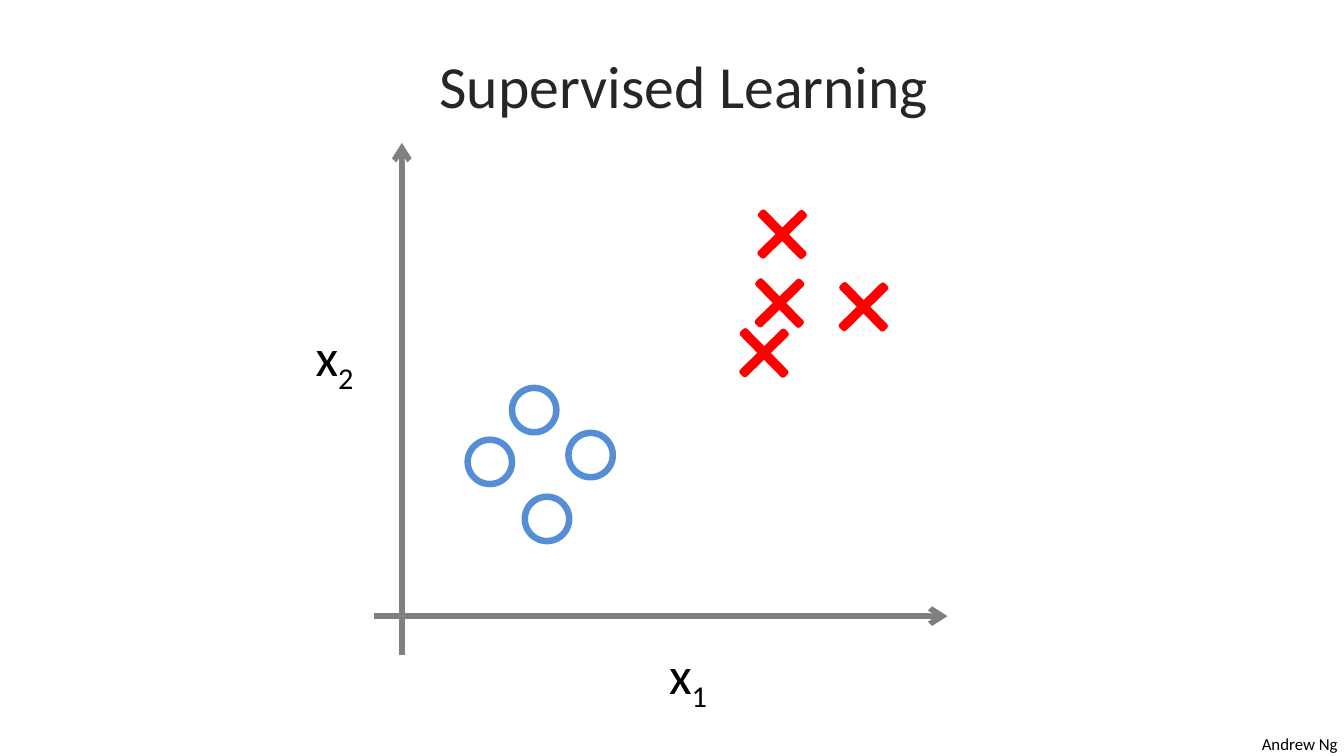
from dataclasses import dataclass

from lxml.etree import SubElement
from pptx import Presentation
from pptx.dml.color import RGBColor as Rgb
from pptx.enum.shapes import MSO_CONNECTOR as Connector, MSO_SHAPE as Preset
from pptx.enum.text import MSO_ANCHOR as Anchor, MSO_AUTO_SIZE as AutoSize, PP_ALIGN as Align
from pptx.oxml.ns import qn
from pptx.util import Inches, Pt

WIDTH = Inches(10)
HEIGHT = WIDTH * 9 // 16


@dataclass(frozen=True)
class Theme:
    font: str = "Calibri"
    title_size: float = 32
    label_size: float = 28
    credit_size: float = 9
    title: Rgb = Rgb(0x26, 0x26, 0x26)
    ink: Rgb = Rgb(0, 0, 0)
    axis: Rgb = Rgb(0x80, 0x80, 0x80)
    circle: Rgb = Rgb(0x55, 0x8E, 0xD5)
    cross: Rgb = Rgb(0xFF, 0, 0)
    axis_width: float = 3
    circle_width: float = 3.5
    cross_width: float = 3


THEME = Theme()

# Centres of the two classes, in percent of the slide's width and height
CIRCLES = [(36.45, 61.1), (43.95, 60.2), (40.7, 68.65), (39.75, 54.25)]
CROSSES = [(56.85, 46.7), (58.2, 31), (64.25, 40.6), (58, 40.1)]
CIRCLE_SIZE, CROSS_SIZE = 3.3, 4.3


def across(percent):
    return round(WIDTH * percent / 100)


def down(percent):
    return round(HEIGHT * percent / 100)


def box(left, top, width, height):
    return across(left), down(top), across(width), down(height)


def set_up_frame(frame):
    frame.word_wrap = False
    frame.auto_size = AutoSize.NONE
    frame.vertical_anchor = Anchor.TOP
    paragraph = frame.paragraphs[0]
    paragraph.alignment = Align.LEFT
    return paragraph


def add_run(paragraph, text, size, color, subscript=False):
    run = paragraph.add_run()
    run.text = text
    run.font.name = THEME.font
    run.font.size = Pt(size)
    run.font.color.rgb = color
    if subscript:
        run._r.get_or_add_rPr().set("baseline", "-25000")


def add_title(slide, text):
    title = slide.shapes.title
    title.left, title.top, title.width, title.height = box(31.7, 5.6, 38.8, 11.4)
    add_run(set_up_frame(title.text_frame), text, THEME.title_size, THEME.title)


def add_text(slide, place, text, size, subscript=""):
    paragraph = set_up_frame(slide.shapes.add_textbox(*box(*place)).text_frame)
    add_run(paragraph, text, size, THEME.ink)
    if subscript:
        add_run(paragraph, subscript, size, THEME.ink, subscript=True)


def add_marker(slide, preset, centre, size, color, line_width):
    """Centre an outlined square marker on a point of the plot."""
    side = across(size)
    marker = slide.shapes.add_shape(
        preset, across(centre[0]) - side // 2, down(centre[1]) - side // 2, side, side)
    marker.shadow.inherit = False
    marker.fill.background()
    marker.line.color.rgb = color
    marker.line.width = Pt(line_width)
    return marker


def add_circle(slide, centre):
    add_marker(slide, Preset.OVAL, centre, CIRCLE_SIZE, THEME.circle, THEME.circle_width)


def add_cross(slide, centre):
    cross = add_marker(slide, Preset.CROSS, centre, CROSS_SIZE, THEME.cross, THEME.cross_width)
    cross.adjustments[0] = 0.466
    cross.rotation = 45.6
    cross.fill.solid()
    cross.fill.fore_color.rgb = THEME.ink


def add_axis(slide, start, end):
    axis = slide.shapes.add_connector(
        Connector.STRAIGHT, across(start[0]), down(start[1]), across(end[0]), down(end[1]))
    axis.line.color.rgb = THEME.axis
    axis.line.width = Pt(THEME.axis_width)
    SubElement(axis.line._get_or_add_ln(), qn("a:tailEnd"), type="arrow")
    SubElement(axis._element.spPr, qn("a:effectLst"))


def main():
    deck = Presentation()
    deck.slide_width, deck.slide_height = WIDTH, HEIGHT
    slide = deck.slides.add_slide(deck.slide_layouts.get_by_name("Title Only"))

    add_title(slide, "Supervised Learning")
    add_text(slide, (92.9, 96.2, 7.7, 4.4), "Andrew Ng", THEME.credit_size)
    for centre in CIRCLES:
        add_circle(slide, centre)
    for centre in CROSSES:
        add_cross(slide, centre)
    add_text(slide, (48.8, 84.1, 5.1, 10.1), "x", THEME.label_size, subscript="1")
    add_text(slide, (22.5, 42, 5.1, 10.1), "x", THEME.label_size, subscript="2")
    add_axis(slide, (29.9, 86.7), (29.9, 18.9))
    add_axis(slide, (27.8, 81.5), (70.5, 81.5))

    deck.save("out.pptx")


if __name__ == "__main__":
    main()
